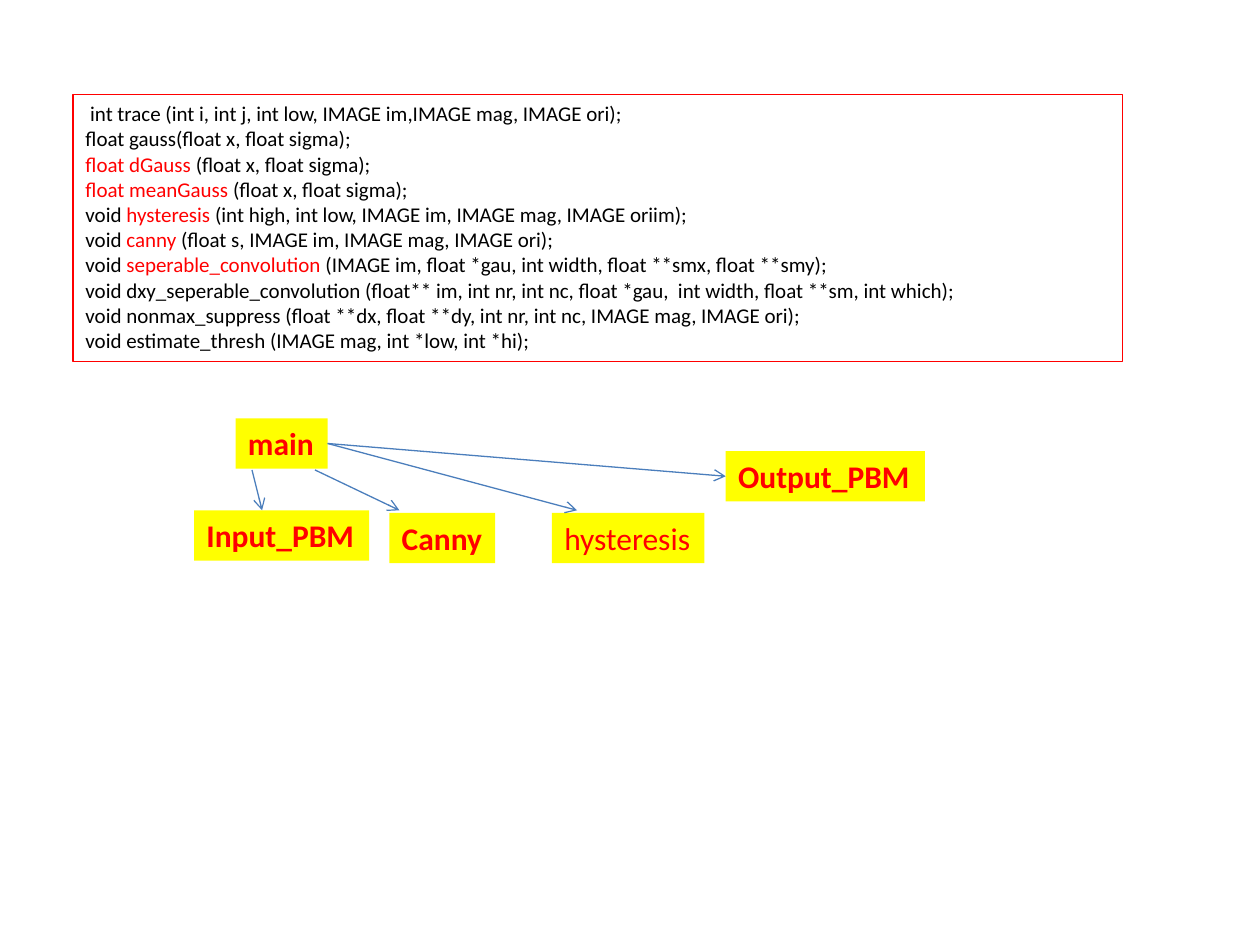
"""Build the slide with the edge detector's prototypes and its call tree."""
from lxml import etree
from pptx import Presentation
from pptx.dml.color import RGBColor
from pptx.enum.shapes import MSO_CONNECTOR
from pptx.enum.text import MSO_AUTO_SIZE
from pptx.oxml.ns import qn
from pptx.util import Inches, Pt

STRAIGHT = MSO_CONNECTOR.STRAIGHT
GROW = MSO_AUTO_SIZE.SHAPE_TO_FIT_TEXT
RIGHT_SIDE, LEFT_SIDE = 3, 1
FONT = "Calibri"
COLOURS = {"text": "000000", "accent": "FF0000", "node": "FFFF00", "arrow": "4B7EBC"}

PROTOTYPES = [
    [(" int trace (int i, int j, int low, IMAGE im,IMAGE mag, IMAGE ori);", "text")],
    [("float gauss(float x, float sigma);", "text")],
    [("float dGauss ", "accent"), ("(float x, float sigma);", "text")],
    [("float meanGauss ", "accent"), ("(float x, float sigma);", "text")],
    [("void ", "text"), ("hysteresis", "accent"),
     (" (int high, int low, IMAGE im, IMAGE mag, IMAGE oriim);", "text")],
    [("void ", "text"), ("canny ", "accent"),
     ("(float s, IMAGE im, IMAGE mag, IMAGE ori);", "text")],
    [("void ", "text"), ("seperable_convolution", "accent"),
     (" (IMAGE im, float *gau, int width, float **smx, float **smy);", "text")],
    [("void dxy_seperable_convolution (float** im, int nr, int nc, float *gau,  "
      "int width, float **sm, int which);", "text")],
    [("void nonmax_suppress (float **dx, float **dy, int nr, int nc, "
      "IMAGE mag, IMAGE ori);", "text")],
    [("void estimate_thresh (IMAGE mag, int *low, int *hi);", "text")],
]
NODE_HEIGHT = 0.4
NODES = [
    ("main", 1.87, 3.32, 0.73, True),
    ("Input_PBM", 1.54, 4.05, 1.39, True),
    ("Canny", 3.09, 4.07, 0.84, True),
    ("hysteresis", 4.38, 4.07, 1.21, False),
    ("Output_PBM", 5.76, 3.58, 1.58, True),
]
CALLS = [
    ((2, 3.73), (2.08, 4.05), None, None),
    ((2.5, 3.73), (3.17, 4.05), None, None),
    ((2.6, 3.52), (4.58, 4.05), "main", None),
    ((2.6, 3.52), (5.76, 3.79), "main", "Output_PBM"),
]


def colour(name):
    return RGBColor.from_string(COLOURS[name])


def add_span(para, text, size, colour_name, bold=False):
    span = para.add_run()
    span.text = text
    span.font.name = FONT
    span.font.size = Pt(size)
    span.font.bold = bold
    span.font.color.rgb = colour(colour_name)


def add_box(page, left, top, width, height, wrap):
    box = page.shapes.add_textbox(*map(Inches, (left, top, width, height)))
    box.text_frame.word_wrap = wrap
    box.text_frame.auto_size = GROW
    return box


def add_prototypes(page):
    box = add_box(page, 0.58, 0.75, 8.33, 2.12, True)
    box.line.color.rgb = colour("accent")
    box.line.width = Pt(0.75)
    frame = box.text_frame
    for index, spans in enumerate(PROTOTYPES):
        para = frame.add_paragraph() if index else frame.paragraphs[0]
        for text, colour_name in spans:
            add_span(para, text, 12, colour_name)


def add_node(page, name, left, top, width, bold):
    box = add_box(page, left, top, width, NODE_HEIGHT, False)
    box.fill.solid()
    box.fill.fore_color.rgb = colour("node")
    add_span(box.text_frame.paragraphs[0], name, 18, "accent", bold)
    return box


def add_arrow(page, start, end, caller=None, callee=None):
    arrow = page.shapes.add_connector(STRAIGHT, *map(Inches, (*start, *end)))
    if caller is not None:
        arrow.begin_connect(caller, RIGHT_SIDE)
    if callee is not None:
        arrow.end_connect(callee, LEFT_SIDE)
    arrow.line.color.rgb = colour("arrow")
    arrow.line.width = Pt(0.75)
    etree.SubElement(arrow.line._get_or_add_ln(), qn("a:tailEnd"), type="arrow")
    etree.SubElement(arrow._element.spPr, qn("a:effectLst"))


def main():
    deck = Presentation()
    deck.slide_width, deck.slide_height = Inches(10), Inches(7.5)
    page = deck.slides.add_slide(deck.slide_layouts[6])
    add_prototypes(page)
    boxes = {node[0]: add_node(page, *node) for node in NODES}
    for start, end, caller, callee in CALLS:
        add_arrow(page, start, end, boxes.get(caller), boxes.get(callee))
    deck.save("out.pptx")


if __name__ == "__main__":
    main()
